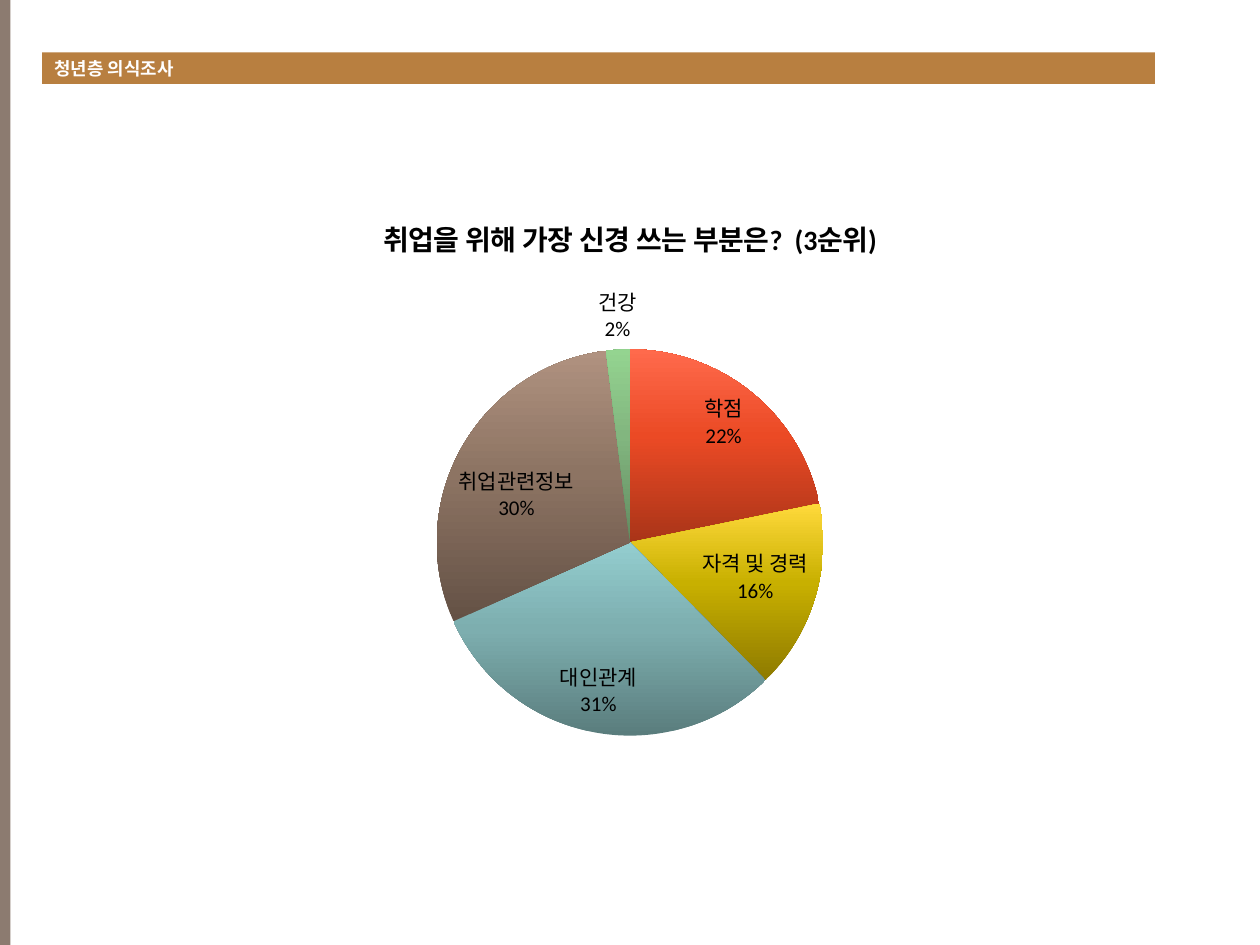
from copy import deepcopy
from pptx import Presentation
from pptx.chart.data import CategoryChartData as Data
from pptx.dml.color import RGBColor as RGB
from pptx.enum.chart import XL_CHART_TYPE as Kind, XL_LABEL_POSITION as Spot
from pptx.enum.shapes import MSO_SHAPE as Form
from pptx.enum.text import MSO_ANCHOR as Anchor, PP_ALIGN as Align
from pptx.oxml import parse_xml
from pptx.oxml.ns import nsdecls
from pptx.util import Pt

HUES = {"side": "8C7B70", "bar": "B87F40", "white": "FFFFFF", "black": "000000"}
# Category: value, then slice colours from bottom to top
PARTS = {
    "학점": (22, "A93418", "EB4A25", "FF6A4C"),
    "자격 및 경력": (16, "8E7A00", "C8B000", "FFD93B"),
    "대인관계": (31, "5A7D7D", "7DAEAF", "93CDCF"),
    "취업관련정보": (30, "645145", "8D7463", "B09280"),
    "건강": (2, "628A60", "82B67F", "94D490"),
}
TITLE = "취업을 위해 가장 신경 쓰는 부분은?  (3순위)"


def style(font, size, hue, bold=False):
    """Set the face, size, colour and weight of a font."""
    font.name, font.size, font.bold = "Calibri", Pt(size), bold
    font.color.rgb = RGB.from_string(HUES[hue])


def block(left, top, width, height, hue):
    """Add a plain filled rectangle and return it."""
    box = slide.shapes.add_shape(
        Form.RECTANGLE, Pt(left), Pt(top), Pt(width), Pt(height))
    box.shadow.inherit = False
    box.fill.solid()
    box.fill.fore_color.rgb = RGB.from_string(HUES[hue])
    box.line.fill.background()
    return box


deck = Presentation()
deck.slide_width, deck.slide_height = Pt(720), Pt(540)
slide = deck.slides.add_slide(deck.slide_layouts[6])

# Side strip and header bar
block(0, 0, 6, 540, "side")
head = block(24, 30, 636, 18, "bar").text_frame
head.text = "청년층 의식조사"
head.vertical_anchor = Anchor.MIDDLE
head.margin_top = head.margin_bottom = 0
head.paragraphs[0].alignment = Align.LEFT
style(head.paragraphs[0].runs[0].font, 10.2, "white", True)

# Pie chart
data = Data()
data.categories = list(PARTS)
data.add_series(TITLE, [part[0] for part in PARTS.values()])
chart = slide.shapes.add_chart(
    Kind.PIE, Pt(120), Pt(110), Pt(480), Pt(320), data).chart
style(chart.font, 18, "black")
chart.has_legend = False
chart.has_title = True
name = chart.chart_title.text_frame
name.text = TITLE
style(name.paragraphs[0].runs[0].font, 16, "black", True)

plot = chart.plots[0]
plot.vary_by_categories = True
pie = plot.series[0]
for i, (_, low, mid, high) in enumerate(PARTS.values()):
    fill = pie.points[i].format.fill
    fill.gradient()
    fill.gradient_angle = 90
    for stop, hue, spot in zip(fill.gradient_stops, (low, high), (0, 1)):
        stop.color.rgb = RGB.from_string(hue)
        stop.position = spot
    # Middle stop of the gradient
    first = chart.element.xpath(".//c:ser/c:dPt//a:gsLst")[i][0]
    extra = deepcopy(first)
    extra.set("pos", "55000")
    extra[0].set("val", mid)
    first.addnext(extra)

tags = pie.data_labels
style(tags.font, 12, "black")
tags.show_value = False
tags.show_category_name = tags.show_percentage = True
tags.number_format, tags.number_format_is_linked = "0%", False
tags.position = Spot.BEST_FIT

# Labels break before the percentage
space = nsdecls("c")
flag = chart.element.xpath(".//c:ser/c:dLbls/c:showBubbleSize")[0]
flag.addnext(parse_xml(f"<c:separator {space}>\n</c:separator>"))

# Place of the pie inside the chart
area = chart.element.xpath(".//c:plotArea")[0]
for old in area.xpath("c:layout"):
    area.remove(old)
rows = "".join(f'<c:{key} val="{val}"/>' for key, val in (
    ("layoutTarget", "inner"), ("xMode", "edge"), ("yMode", "edge"),
    ("x", 0.27), ("y", 0.28), ("w", 0.46), ("h", 0.69)))
area.insert(0, parse_xml(
    f"<c:layout {space}><c:manualLayout>{rows}</c:manualLayout></c:layout>"))

deck.save("out.pptx")
